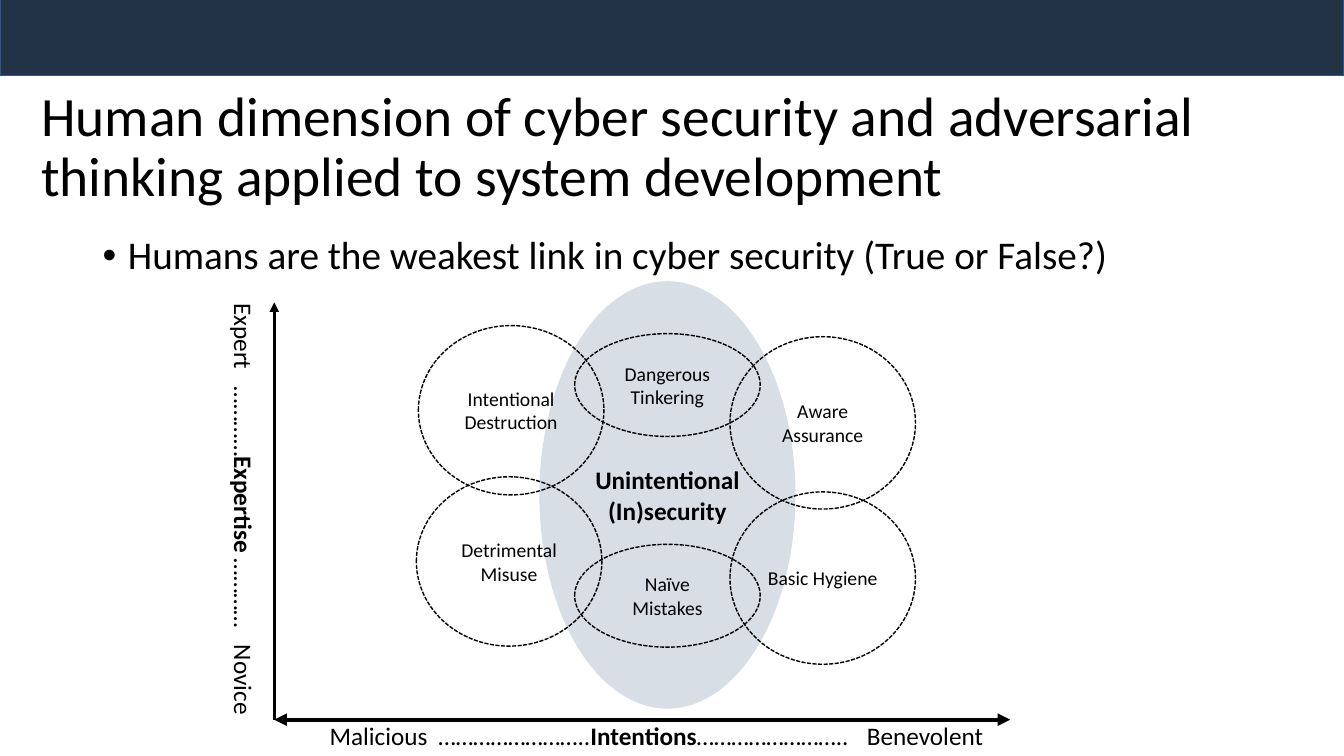
from pptx import Presentation
from pptx.dml.color import RGBColor
from pptx.enum.dml import MSO_LINE
from pptx.enum.shapes import MSO_CONNECTOR, MSO_SHAPE
from pptx.enum.text import MSO_ANCHOR, PP_ALIGN
from pptx.oxml.ns import qn
from pptx.util import Emu, Pt
from lxml.etree import SubElement

PX = 9144  # EMU in one px, 100 px to the inch
COLORS = {"ink": "000000", "navy": "223346", "edge": "325491", "mist": "D6DCE5"}


def px(*nums):
    return [Emu(n * PX) for n in nums]


def color(name):
    return RGBColor.from_string(COLORS[name])


class Deck:
    font = "Calibri"

    def __init__(self, wide, high):
        self.prs = Presentation()
        self.prs.slide_width, self.prs.slide_height = px(wide, high)
        self.slide = self.prs.slides.add_slide(self.prs.slide_layouts[6])
        self.shapes = self.slide.shapes

    def style(self, font, size, bold=False):
        font.name, font.size, font.bold = self.font, Pt(size), bold
        font.color.rgb = color("ink")

    def shape(self, kind, box, fill=None, line=None, dash=None):
        item = self.shapes.add_shape(kind, *px(*box))
        item.shadow.inherit = False
        if fill:
            item.fill.solid()
            item.fill.fore_color.rgb = color(fill)
        else:
            item.fill.background()
        if line:
            item.line.color.rgb = color(line)
            item.line.width = Pt(1)
            item.line.dash_style = dash
        else:
            item.line.fill.background()
        return item

    def oval(self, text, box, size=14, bold=False, fill=None, alpha=None):
        line = None if fill else "ink"
        item = self.shape(MSO_SHAPE.OVAL, box, fill, line, MSO_LINE.SQUARE_DOT)
        if alpha:
            tint = item.fill._xPr.find(".//" + qn("a:srgbClr"))
            SubElement(tint, qn("a:alpha"), val=str(alpha * 1000))
        frame = item.text_frame
        frame.word_wrap = True
        frame.vertical_anchor = MSO_ANCHOR.MIDDLE
        para = frame.paragraphs[0]
        para.text, para.alignment = text, PP_ALIGN.CENTER
        self.style(para.font, size, bold)

    def text(self, text, box, size, anchor=MSO_ANCHOR.TOP, bullet=False):
        frame = self.shapes.add_textbox(*px(*box)).text_frame
        frame.word_wrap = True
        frame.vertical_anchor = anchor
        para = frame.paragraphs[0]
        para.text, para.line_spacing = text, 0.9
        if bullet:
            props = para._p.get_or_add_pPr()
            props.set("marL", str(25 * PX))
            props.set("indent", str(-25 * PX))
            SubElement(props, qn("a:buFont"), typeface="Arial")
            SubElement(props, qn("a:buChar"), char="•")
        self.style(para.font, size)

    def label(self, parts, box, tabs, turn=0):
        item = self.shapes.add_textbox(*px(*box))
        item.rotation = turn
        frame = item.text_frame
        frame.word_wrap = True
        frame.margin_right = 0
        para = frame.paragraphs[0]
        stops = SubElement(para._p.get_or_add_pPr(), qn("a:tabLst"))
        for tab in tabs:
            SubElement(stops, qn("a:tab"), pos=str(tab * PX), algn="l")
        # The middle part names the axis
        for spot, part in enumerate(parts):
            run = para.add_run()
            run.text = part
            self.style(run.font, 18, spot == 1)

    def arrow(self, start, end, width, heads):
        item = self.shapes.add_connector(MSO_CONNECTOR.STRAIGHT, *px(*start, *end))
        item.line.color.rgb = color("ink")
        item.line.width = Pt(width)
        for head in heads:
            SubElement(item.line._get_or_add_ln(), qn("a:" + head), type="triangle")
        SubElement(item._element.spPr, qn("a:effectLst"))

    def save(self):
        self.prs.save("out.pptx")


def main():
    deck = Deck(1333, 750)

    # Top band, title and bullet
    deck.shape(MSO_SHAPE.RECTANGLE, (0, -3, 1333, 78), "navy", "edge")
    deck.text("Human dimension of cyber security and adversarial thinking "
              "applied to system development",
              (31, 75, 1246, 145), 39.6, MSO_ANCHOR.MIDDLE)
    deck.text("Humans are the weakest link in cyber security (True or False?)",
              (92, 229, 1150, 78), 28, bullet=True)

    # Shaded core and the behaviours around it
    deck.oval("Unintentional (In)security", (535, 279, 254, 424), 18, True,
              "mist", 94)
    for text, left, top, high in (
        ("Intentional Destruction", 415, 323, 168),
        ("Detrimental Misuse", 413, 473, 168),
        ("Aware Assurance", 724, 334, 171),
        ("Basic Hygiene", 724, 488, 171),
        ("Dangerous Tinkering", 570, 331, 102),
        ("Naïve Mistakes", 570, 540, 102),
    ):
        deck.oval(text, (left, top, 184, high))

    # Axes with their labels
    root = (272, 714)
    deck.arrow(root, (272, 300), 2.25, ["tailEnd"])
    deck.arrow(root, (1002, 714), 3, ["headEnd", "tailEnd"])
    deck.label(("Malicious\t……………………..", "Intentions",
                "……………………..\tBenevolent"),
               (317, 710, 671, 40), (108, 533))
    deck.label(("Expert\t…………", "Expertise", " …………\tNovice"),
               (27, 486, 430, 40), (83, 339), 90)

    deck.save()


if __name__ == "__main__":
    main()
